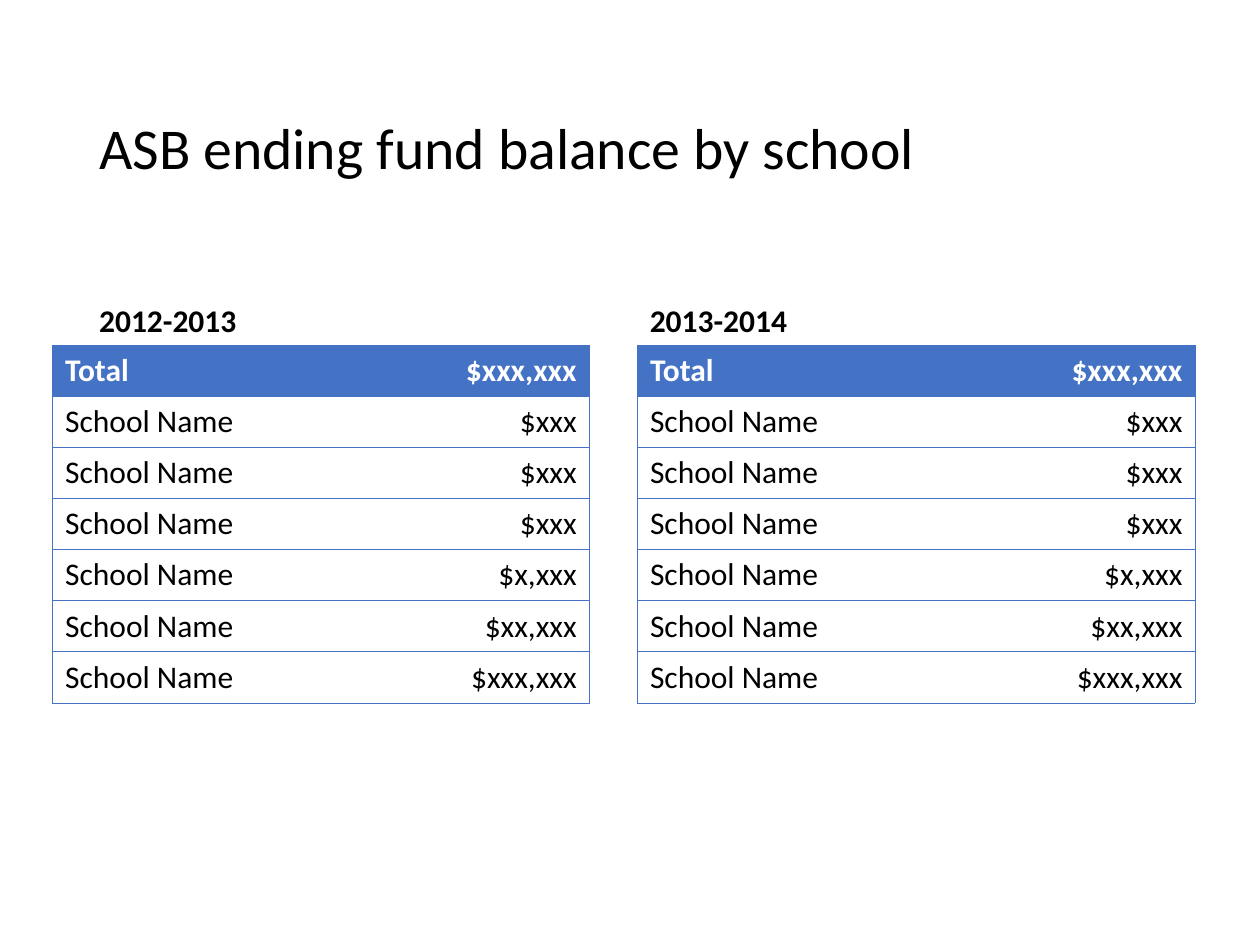
import pptx
import pptx.util
import pptx.dml.color
import pptx.enum.text
import pptx.oxml.ns
import lxml.etree

Cm = pptx.util.Cm
Pt = pptx.util.Pt
ANCHOR = pptx.enum.text.MSO_ANCHOR
ALIGN = pptx.enum.text.PP_ALIGN

COLORS = {"text": "000000", "accent": "4472C4", "paper": "FFFFFF"}
TITLE = "ASB ending fund balance by school"
BALANCES = [
    ("Total", "$xxx,xxx"),
    ("School Name", "$xxx"),
    ("School Name", "$xxx"),
    ("School Name", "$xxx"),
    ("School Name", "$x,xxx"),
    ("School Name", "$xx,xxx"),
    ("School Name", "$xxx,xxx"),
]
YEARS = [
    {"label": "2012-2013", "label_left": 1.75, "table_left": 1.06, "columns": (6.74, 4.08)},
    {"label": "2013-2014", "label_left": 12.85, "table_left": 12.85, "columns": (7.0, 4.24)},
]
LABEL_TOP, LABEL_WIDTH, LABEL_HEIGHT = 4.67, 10.77, 2.29
TABLE_TOP = LABEL_TOP + LABEL_HEIGHT
ROW_HEIGHT = 1.03


def write_text(frame, text, size=18, bold=False, color="text", align=ALIGN.LEFT,
               line_spacing=None, space_before=0):
    paragraph = frame.paragraphs[0]
    paragraph.alignment = align
    paragraph.space_before = Pt(space_before)
    if line_spacing:
        paragraph.line_spacing = line_spacing
    run = paragraph.add_run()
    run.text = text
    run.font.name = "Calibri"
    run.font.size = Pt(size)
    run.font.bold = bold
    run.font.color.rgb = pptx.dml.color.RGBColor.from_string(COLORS[color])


def add_label(slide, text, left, top, width, height, anchor, **text_format):
    shape = slide.shapes.add_textbox(Cm(left), Cm(top), Cm(width), Cm(height))
    frame = shape.text_frame
    frame.word_wrap = True
    frame.vertical_anchor = anchor
    write_text(frame, text, line_spacing=0.9, **text_format)


def set_borders(cell, visible_sides):
    properties = cell._tc.get_or_add_tcPr()
    qn = pptx.oxml.ns.qn
    for side in "LRTB":
        line = lxml.etree.SubElement(properties, qn("a:ln" + side), w=str(Pt(0.5)))
        if side in visible_sides:
            fill = lxml.etree.SubElement(line, qn("a:solidFill"))
            lxml.etree.SubElement(fill, qn("a:srgbClr"), val=COLORS["accent"])
        else:
            lxml.etree.SubElement(line, qn("a:noFill"))


def add_balance_table(slide, left, columns):
    shape = slide.shapes.add_table(
        len(BALANCES), len(columns), Cm(left), Cm(TABLE_TOP),
        Cm(sum(columns)), Cm(ROW_HEIGHT * len(BALANCES)))
    table = shape.table
    table.horz_banding = False
    for column, width in zip(table.columns, columns):
        column.width = Cm(width)
    for row_index, values in enumerate(BALANCES):
        table.rows[row_index].height = Cm(ROW_HEIGHT)
        is_header = row_index == 0
        for column_index, value in enumerate(values):
            cell = table.cell(row_index, column_index)
            set_borders(cell, "TB" + "LR"[column_index])
            cell.fill.solid()
            cell.fill.fore_color.rgb = pptx.dml.color.RGBColor.from_string(
                COLORS["accent" if is_header else "paper"])
            write_text(cell.text_frame, value, bold=is_header,
                       color="paper" if is_header else "text",
                       align=(ALIGN.LEFT, ALIGN.RIGHT)[column_index])


def main():
    presentation = pptx.Presentation()
    presentation.slide_width = Cm(25.4)
    presentation.slide_height = Cm(19.05)
    slide = presentation.slides.add_slide(presentation.slide_layouts[6])
    add_label(slide, TITLE, 1.75, 1.19, 21.9, 3.68, ANCHOR.MIDDLE, size=33)
    for year in YEARS:
        add_label(slide, year["label"], year["label_left"], LABEL_TOP, LABEL_WIDTH,
                  LABEL_HEIGHT, ANCHOR.BOTTOM, bold=True, space_before=7.5)
        add_balance_table(slide, year["table_left"], year["columns"])
    presentation.save("out.pptx")


if __name__ == "__main__":
    main()
